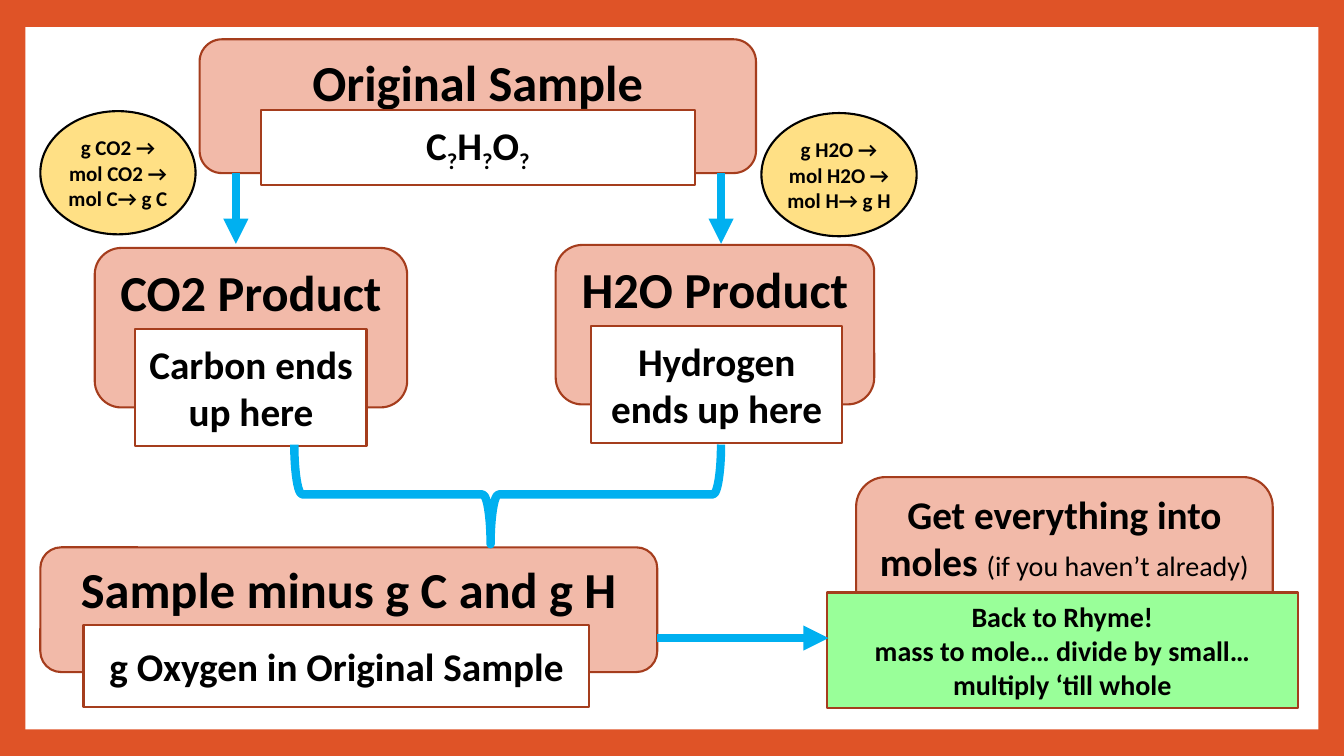
import dataclasses

import lxml.etree
import pptx
import pptx.dml.color
import pptx.enum.shapes
import pptx.enum.text
import pptx.oxml.ns
import pptx.util

SHAPE = pptx.enum.shapes.MSO_SHAPE
ANCHOR = pptx.enum.text.MSO_ANCHOR
WIDTH, HEIGHT = pptx.util.Inches(13.33), pptx.util.Inches(7.5)


@dataclasses.dataclass(frozen=True)
class Theme:
    font: str = "Calibri"
    frame: str = "DF5327"
    paper: str = "FFFFFF"
    card: str = "F2BAA9"
    edge: str = "A53D1D"
    bubble: str = "FFE085"
    rhyme: str = "99FF99"
    flow: str = "00B0F0"
    ink: str = "000000"
    heading: float = 36
    body: float = 28
    note: float = 20
    small: float = 15
    outline: float = 1.5
    flow_line: float = 6


THEME = Theme()


@dataclasses.dataclass(frozen=True)
class Box:
    left: int
    top: int
    width: int
    height: int

    def share(self, x, y, w, h):
        """Box inside this one, given as shares of its size."""
        return Box(int(self.left + x * self.width), int(self.top + y * self.height),
                   int(w * self.width), int(h * self.height))


def cells(x, y, w, h):
    """Box on a slide grid of 100 columns by 100 rows."""
    return Box(0, 0, WIDTH, HEIGHT).share(x / 100, y / 100, w / 100, h / 100)


def rgb(color):
    return pptx.dml.color.RGBColor.from_string(color)


def add_block(slide, kind, box, fill, line=None):
    sp = slide.shapes.add_shape(kind, box.left, box.top, box.width, box.height)
    sp.shadow.inherit = False
    sp.fill.solid()
    sp.fill.fore_color.rgb = rgb(fill)
    if line:
        sp.line.color.rgb = rgb(line)
        sp.line.width = pptx.util.Pt(THEME.outline)
    else:
        sp.line.fill.background()
    return sp


def format_run(r, size, bold=True):
    r.font.name = THEME.font
    r.font.size = pptx.util.Pt(size)
    r.font.bold = bold
    r.font.color.rgb = rgb(THEME.ink)


def write(sp, text, size, anchor=ANCHOR.MIDDLE):
    tf = sp.text_frame
    tf.word_wrap = True
    tf.vertical_anchor = anchor
    tf.text = text
    for p in tf.paragraphs:
        p.alignment = pptx.enum.text.PP_ALIGN.CENTER
        for r in p.runs:
            format_run(r, size)


def add_card(slide, box, heading, plate, text, size=THEME.heading,
             plate_fill=THEME.paper, plate_size=THEME.body):
    """Rounded card with a plate, placed by shares of the card, over its lower edge."""
    card = add_block(slide, SHAPE.ROUNDED_RECTANGLE, box, THEME.card, THEME.edge)
    write(card, heading, size, ANCHOR.TOP)
    label = add_block(slide, SHAPE.RECTANGLE, box.share(*plate), plate_fill, THEME.edge)
    write(label, text, plate_size)
    return card, label


def add_bubble(slide, box, text):
    sp = add_block(slide, SHAPE.OVAL, box, THEME.bubble, THEME.ink)
    write(sp, text, THEME.small)
    tf = sp.text_frame
    tf.margin_left = tf.margin_right = tf.margin_top = tf.margin_bottom = 0


def add_arrow(slide, box):
    c = slide.shapes.add_connector(
        pptx.enum.shapes.MSO_CONNECTOR.STRAIGHT, box.left, box.top,
        box.left + box.width, box.top + box.height)
    c.line.color.rgb = rgb(THEME.flow)
    c.line.width = pptx.util.Pt(THEME.flow_line)
    props = c._element.spPr
    tail = lxml.etree.SubElement(props.get_or_add_ln(), pptx.oxml.ns.qn("a:tailEnd"))
    tail.set("type", "triangle")
    lxml.etree.SubElement(props, pptx.oxml.ns.qn("a:effectLst"))


def add_brace(slide, box):
    """Brace that fills the box and points down."""
    shift = (box.width - box.height) // 2
    sp = slide.shapes.add_shape(SHAPE.LEFT_BRACE, box.left + shift, box.top - shift,
                                box.height, box.width)
    sp.rotation = 270
    sp.adjustments[0], sp.adjustments[1] = 0.08, 0.46
    sp.shadow.inherit = False
    sp.fill.background()
    sp.line.color.rgb = rgb(THEME.flow)
    sp.line.width = pptx.util.Pt(THEME.flow_line)


def add_frame(slide):
    slide.background.fill.solid()
    slide.background.fill.fore_color.rgb = rgb(THEME.frame)
    add_block(slide, SHAPE.RECTANGLE, cells(1.9, 3.6, 96.2, 92.9), THEME.paper)


def add_sample(slide, box):
    _, formula = add_card(slide, box, "Original Sample", (0.11, 0.53, 0.78, 0.56), "")
    p = formula.text_frame.paragraphs[0]
    for symbol in "C?H?O?":
        r = p.add_run()
        r.text = symbol
        format_run(r, THEME.body)
        if symbol == "?":
            r.font._element.set("baseline", "-25000")


def add_moles(slide, box):
    card, _ = add_card(
        slide, box, "Get everything into moles ", (-0.07, 0.65, 1.13, 0.65),
        "Back to Rhyme!\nmass to mole… divide by small… multiply ‘till whole",
        THEME.body, THEME.rhyme, THEME.note)
    r = card.text_frame.paragraphs[0].add_run()
    r.text = "(if you haven’t already)"
    format_run(r, THEME.note, bold=False)


def build_analysis(slide):
    add_frame(slide)
    add_sample(slide, cells(14.85, 5.2, 41.4, 17.7))
    add_card(slide, cells(7.05, 32.8, 23.25, 21.1), "CO2 Product",
             (0.13, 0.51, 0.74, 0.73), "Carbon ends up here")
    add_card(slide, cells(41.35, 32.4, 23.7, 21.1), "H2O Product",
             (0.11, 0.51, 0.79, 0.73), "Hydrogen ends up here")
    add_card(slide, cells(3, 72.4, 45.9, 16.5), "Sample minus g C and g H",
             (0.07, 0.62, 0.82, 0.66), "g Oxygen in Original Sample")
    for column in (17.55, 53.65):
        add_arrow(slide, cells(column, 22.95, 0, 9.3))
    add_brace(slide, cells(21.9, 58.8, 31.75, 13.2))
    add_bubble(slide, cells(3, 14.7, 11.55, 16.3), "g CO2 → mol CO2 → mol C→ g C")
    add_bubble(slide, cells(56.65, 14.95, 11.55, 16.3), "g H2O → mol H2O → mol H→ g H")
    add_moles(slide, cells(63.7, 63.1, 31, 23.5))
    add_arrow(slide, cells(48.9, 84.4, 12.75, 0))


def main():
    prs = pptx.Presentation()
    prs.slide_width, prs.slide_height = WIDTH, HEIGHT
    build_analysis(prs.slides.add_slide(prs.slide_layouts.get_by_name("Blank")))
    prs.save("out.pptx")


if __name__ == "__main__":
    main()
